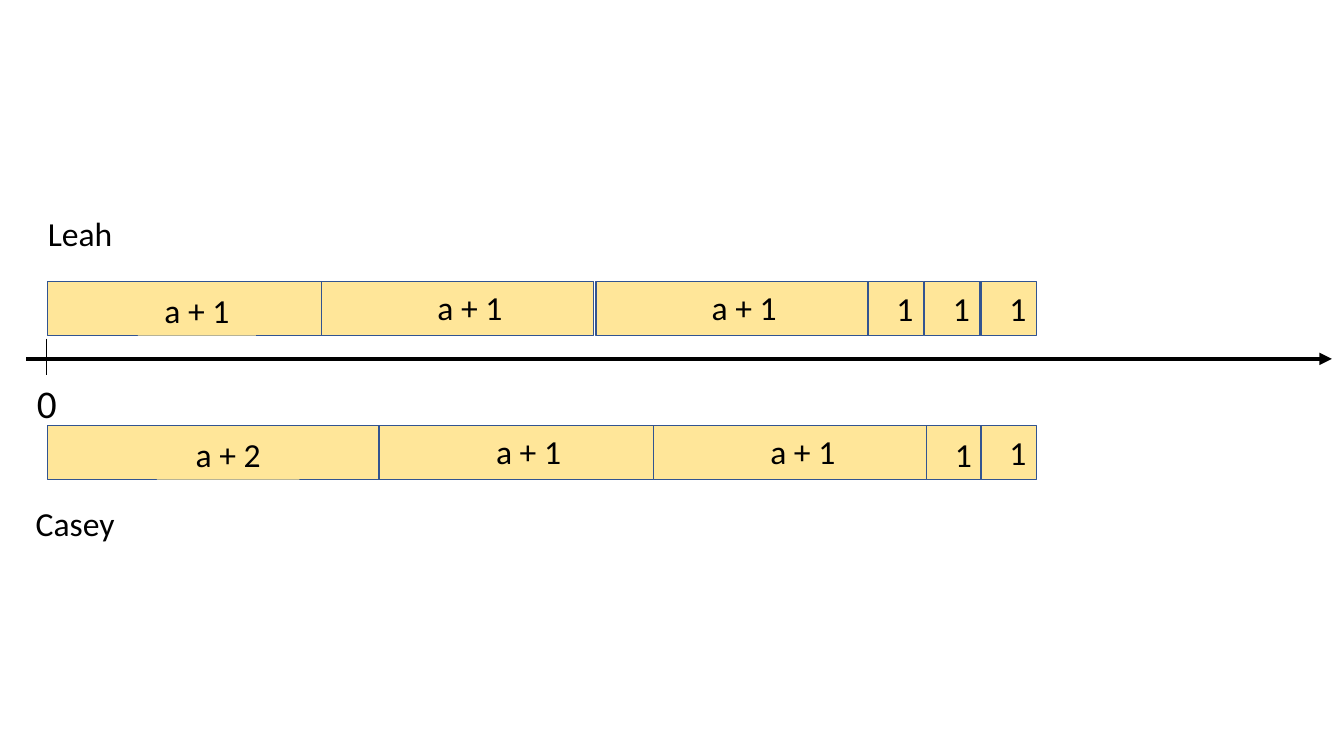
from lxml import etree
from pptx import Presentation
from pptx.dml.color import RGBColor
from pptx.enum.shapes import MSO_CONNECTOR, MSO_SHAPE
from pptx.enum.text import MSO_AUTO_SIZE, PP_ALIGN
from pptx.oxml.ns import qn
from pptx.util import Inches, Pt

RECTANGLE = MSO_SHAPE.RECTANGLE
STRAIGHT = MSO_CONNECTOR.STRAIGHT
FIT_TEXT = MSO_AUTO_SIZE.SHAPE_TO_FIT_TEXT
CENTER = PP_ALIGN.CENTER

YELLOW = RGBColor(0xFF, 0xE6, 0x99)
BLUE = RGBColor(0x32, 0x54, 0x91)
BLACK = RGBColor(0, 0, 0)

BAR_HEIGHT = 0.54
LABEL_HEIGHT = 0.5
LABEL_OFFSET_SHARE = 0.33
LABEL_WIDTH_SHARE = 0.43

# Each bar: left, width, label, label drop, label filled
LEAH_BARS = [
    (0.47, 2.72, "a + 1", 0.04, True),
    (3.19, 2.7, "a + 1", 0.01, True),
    (5.91, 2.7, "a + 1", 0.01, True),
    (8.61, 0.55, "1", 0.02, True),
    (9.17, 0.55, "1", 0.02, True),
    (9.73, 0.55, "1", 0.02, True),
]
CASEY_BARS = [
    (0.47, 3.29, "a + 2", 0.04, True),
    (3.76, 2.72, "a + 1", 0.01, True),
    (6.48, 2.72, "a + 1", 0.01, True),
    (9.19, 0.55, "1", 0.04, False),
    (9.73, 0.55, "1", 0.02, True),
]


def add_label(shapes, text, left, top, width, height=LABEL_HEIGHT, size=24):
    """Add a centred text box and return it."""
    label = shapes.add_textbox(Inches(left), Inches(top), Inches(width), Inches(height))
    frame = label.text_frame
    frame.word_wrap = True
    frame.auto_size = FIT_TEXT
    paragraph = frame.paragraphs[0]
    paragraph.alignment = CENTER
    run = paragraph.add_run()
    run.text = text
    run.font.name = "Calibri"
    run.font.size = Pt(size)
    run.font.color.rgb = BLACK
    return label


def add_bar(shapes, top, left, width, text, drop, filled):
    """Add one bar with its label."""
    bar = shapes.add_shape(
        RECTANGLE, Inches(left), Inches(top), Inches(width), Inches(BAR_HEIGHT)
    )
    bar.shadow.inherit = False
    bar.fill.solid()
    bar.fill.fore_color.rgb = YELLOW
    bar.line.color.rgb = BLUE
    bar.line.width = Pt(1)
    label = add_label(
        shapes, text, left + LABEL_OFFSET_SHARE * width, top + drop,
        LABEL_WIDTH_SHARE * width,
    )
    if filled:
        label.fill.solid()
        label.fill.fore_color.rgb = YELLOW


def add_bar_row(slide, top, bars):
    """Add a grouped row of bars."""
    group = slide.shapes.add_group_shape()
    for bar in bars:
        add_bar(group.shapes, top, *bar)


def add_line(shapes, start, end, weight):
    """Add a black straight line and return it."""
    line = shapes.add_connector(STRAIGHT, *map(Inches, start + end))
    line.line.color.rgb = BLACK
    line.line.width = Pt(weight)
    etree.SubElement(line._element.spPr, qn("a:effectLst"))
    return line


def add_number_line(slide):
    """Add the arrowed axis and its marked origin."""
    axis = add_line(slide.shapes, (0.26, 3.56), (13.21, 3.56), 3)
    etree.SubElement(axis.line._get_or_add_ln(), qn("a:tailEnd"), type="triangle")
    origin = slide.shapes.add_group_shape()
    add_line(origin.shapes, (0.46, 3.36), (0.46, 3.72), 0.5)
    add_label(origin.shapes, "0", 0.16, 3.71, 0.61, 0.57, 28)


def main():
    """Build and save the slide."""
    presentation = Presentation()
    presentation.slide_width = Inches(13.33)
    presentation.slide_height = Inches(7.5)
    slide = presentation.slides.add_slide(presentation.slide_layouts[6])
    add_bar_row(slide, 2.79, LEAH_BARS)
    add_label(slide.shapes, "Leah", -0.99, 2.06, 3.57)
    add_label(slide.shapes, "Casey", -1.04, 4.94, 3.57)
    add_bar_row(slide, 4.22, CASEY_BARS)
    add_number_line(slide)
    presentation.save("out.pptx")


if __name__ == "__main__":
    main()
